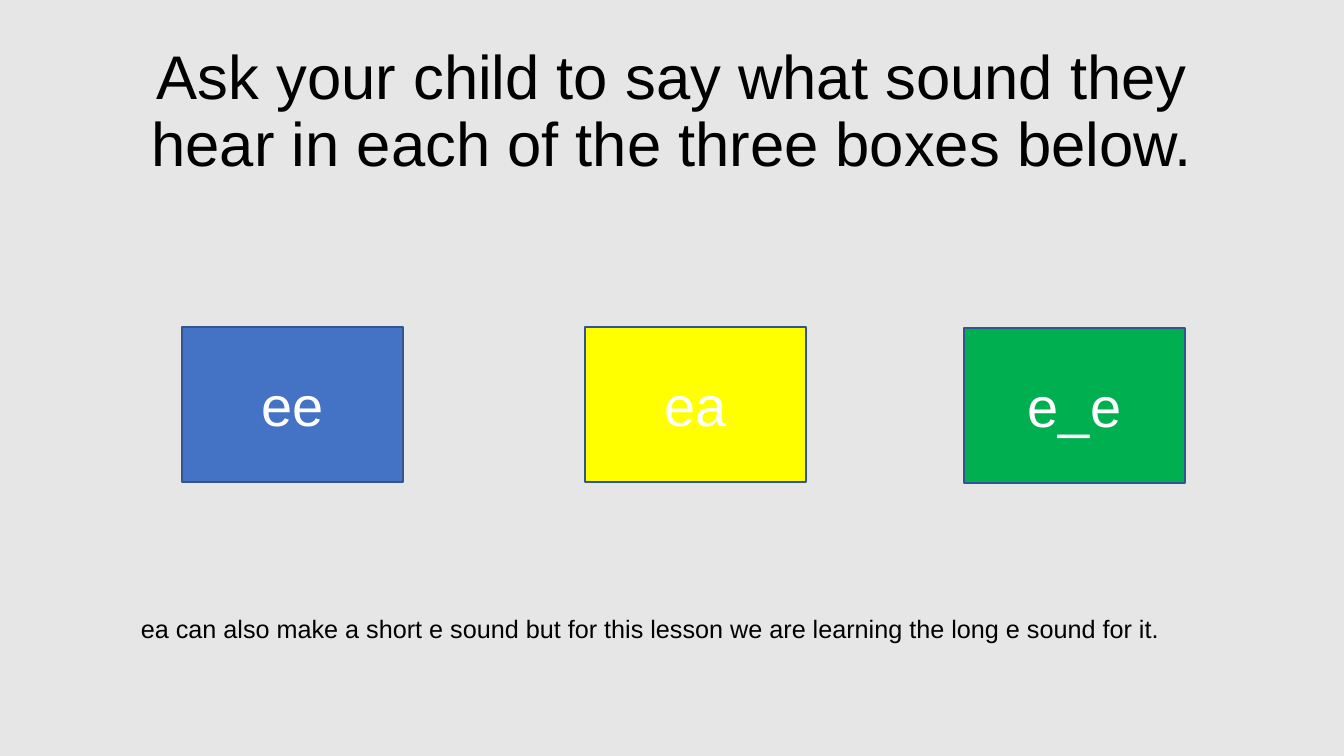
from pptx import Presentation
from pptx.dml.color import RGBColor
from pptx.enum.shapes import MSO_SHAPE
from pptx.enum.text import MSO_ANCHOR, PP_ALIGN
from pptx.util import Pt

COLOURS = {
    "background": "E7E6E6",
    "ink": "000000",
    "white": "FFFFFF",
    "outline": "325491",
    "blue": "4472C4",
    "yellow": "FFFF00",
    "green": "00B050",
}
HEADING = "Ask your child to say what sound they hear in each of the three boxes below."
SOUNDS = [
    ("ee", "blue", 182, 327),
    ("ea", "yellow", 585, 327),
    ("e_e", "green", 964, 328),
]
HINT = "ea can also make a short e sound but for this lesson we are learning the long e sound for it."

SLIDE_SIZE = (1344, 756)
HEADING_AREA = (93, 40, 1159, 146)
SOUND_SIZE = (221, 155)
HINT_AREA = (114, 608, 1072, 40)
EMU_PER_PX = 914400 / 100.8


def emu(*lengths):
    return [round(length * EMU_PER_PX) for length in lengths]


def colour(key):
    return RGBColor.from_string(COLOURS[key])


def write(holder, words, size, ink, anchor=MSO_ANCHOR.MIDDLE, spacing=1.0):
    frame = holder.text_frame
    frame.text = words
    frame.word_wrap = True
    frame.vertical_anchor = anchor
    line = frame.paragraphs[0]
    line.alignment = PP_ALIGN.CENTER
    line.line_spacing = spacing
    font = line.runs[0].font
    font.name = "Arial"
    font.size = Pt(size)
    font.color.rgb = colour(ink)


def add_sound(slide, sound, fill, left, top):
    box = slide.shapes.add_shape(MSO_SHAPE.RECTANGLE, *emu(left, top, *SOUND_SIZE))
    box.shadow.inherit = False
    box.fill.solid()
    box.fill.fore_color.rgb = colour(fill)
    box.line.color.rgb = colour("outline")
    box.line.width = Pt(1)
    write(box, sound, 40, "white")


def main():
    deck = Presentation()
    deck.slide_width, deck.slide_height = emu(*SLIDE_SIZE)
    slide = deck.slides.add_slide(deck.slide_layouts[6])
    slide.background.fill.solid()
    slide.background.fill.fore_color.rgb = colour("background")

    heading = slide.shapes.add_textbox(*emu(*HEADING_AREA))
    write(heading, HEADING, 44, "ink", spacing=0.9)
    for sound in SOUNDS:
        add_sound(slide, *sound)
    hint = slide.shapes.add_textbox(*emu(*HINT_AREA))
    write(hint, HINT, 18, "ink", MSO_ANCHOR.TOP)

    deck.save("out.pptx")


if __name__ == "__main__":
    main()
